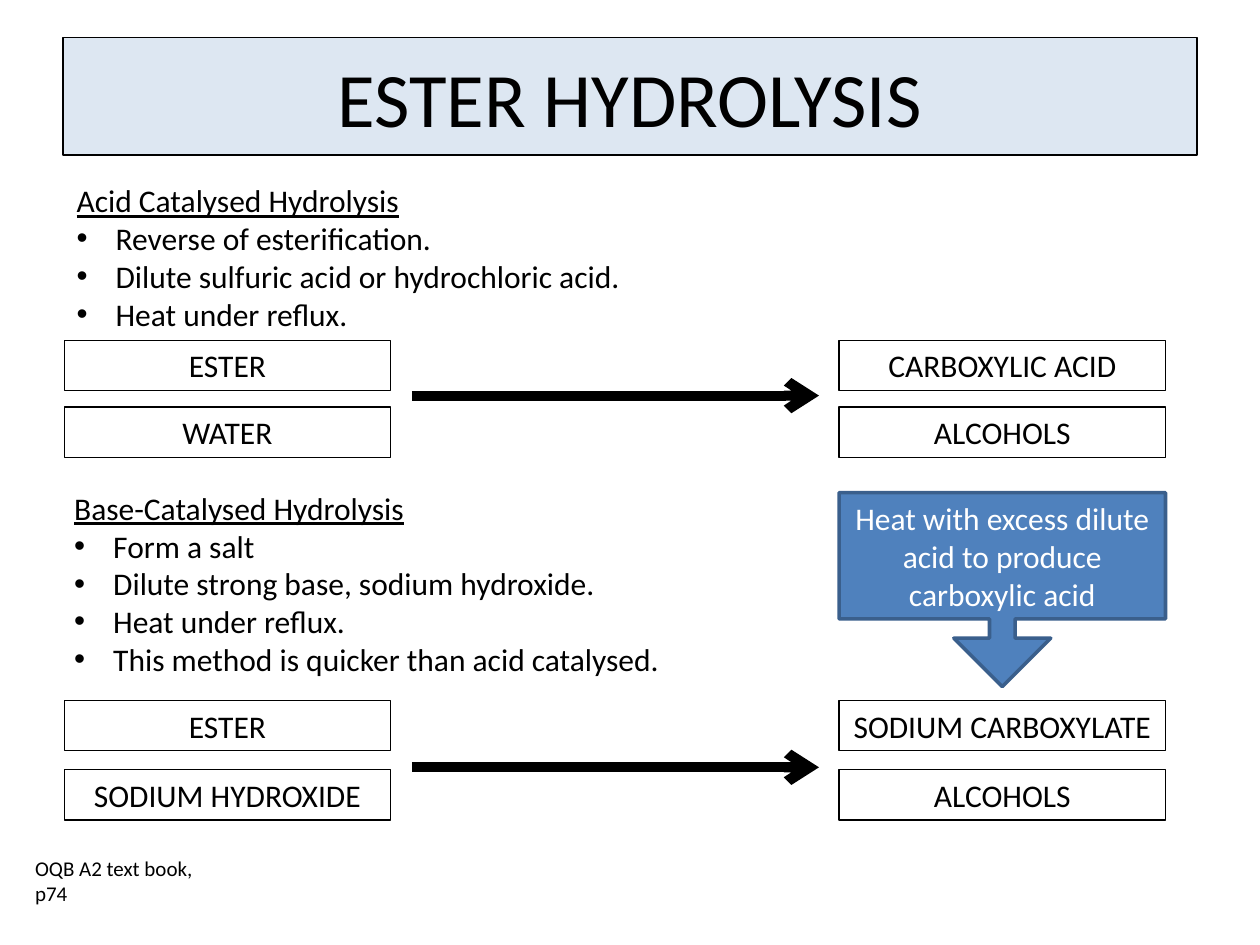
import dataclasses

import pptx
import pptx.dml.color
import pptx.enum.shapes
import pptx.enum.text
import pptx.oxml
import pptx.oxml.ns
import pptx.util

Inches = pptx.util.Inches
Align = pptx.enum.text.PP_ALIGN
Anchor = pptx.enum.text.MSO_ANCHOR
Shapes = pptx.enum.shapes.MSO_SHAPE


@dataclasses.dataclass(frozen=True)
class Theme:
    """Colours, font and type sizes of the slide."""
    font: str = "Calibri"
    ink: str = "000000"
    accent: str = "4F81BD"
    accent_edge: str = "3A5F8C"
    paper: str = "FFFFFF"
    title_opacity: int = 19
    title_size: int = 44
    body_size: int = 18
    note_size: int = 12
    thin: float = 0.75
    edge: float = 2
    thick: float = 5.75


THEME = Theme()


def rgb(code):
    """Turn a hex code into a colour."""
    return pptx.dml.color.RGBColor.from_string(code)


def add_xml(parent, tag, **attributes):
    """Append a DrawingML element to a parent and return it."""
    child = pptx.oxml.parse_xml(f"<a:{tag} {pptx.oxml.ns.nsdecls('a')}/>")
    for name, value in attributes.items():
        child.set(name, str(value))
    parent.append(child)
    return child


def set_line(shape, color, width):
    """Give a shape a solid line."""
    shape.line.color.rgb = rgb(color)
    shape.line.width = pptx.util.Pt(width)


def style(para, size, color=THEME.ink, align=None):
    """Set the font and alignment of a paragraph."""
    para.font.name = THEME.font
    para.font.size = pptx.util.Pt(size)
    para.font.color.rgb = rgb(color)
    para.alignment = align


def place_title(page, box, text):
    """Fill the title placeholder with a tinted, outlined banner."""
    title = page.shapes.title
    title.left, title.top, title.width, title.height = map(Inches, box)
    title.fill.solid()
    title.fill.fore_color.rgb = rgb(THEME.accent)
    tint = title.element.spPr.find(".//" + pptx.oxml.ns.qn("a:srgbClr"))
    add_xml(tint, "alpha", val=THEME.title_opacity * 1000)
    set_line(title, THEME.ink, THEME.thin)
    title.text_frame.text = text
    title.text_frame.vertical_anchor = Anchor.MIDDLE
    style(title.text_frame.paragraphs[0], THEME.title_size, align=Align.CENTER)


def place_text(page, box, text, size=THEME.body_size, align=None):
    """Add a wrapping text box with one paragraph and return it."""
    label = page.shapes.add_textbox(*map(Inches, box))
    frame = label.text_frame
    frame.word_wrap = True
    frame.auto_size = pptx.enum.text.MSO_AUTO_SIZE.SHAPE_TO_FIT_TEXT
    frame.text = text
    style(frame.paragraphs[0], size, align=align)
    return label


def place_conditions(page, box, heading, points):
    """Add an underlined heading with bullet points below it."""
    frame = place_text(page, box, heading).text_frame
    frame.paragraphs[0].font.underline = True
    indent = Inches(0.31)
    for point in points:
        para = frame.add_paragraph()
        para.text = point
        style(para, THEME.body_size)
        properties = para._p.get_or_add_pPr()
        properties.set("marL", str(indent))
        properties.set("indent", str(-indent))
        bullet_font = add_xml(properties, "buFont", typeface="Arial")
        bullet = add_xml(properties, "buChar", char="•")
        properties.remove(bullet_font)
        properties.remove(bullet)
        properties.insert(0, bullet_font)
        properties.insert(1, bullet)


def place_arrow(page, start, end, y):
    """Add a thick reaction arrow pointing right."""
    arrow = page.shapes.add_connector(
        pptx.enum.shapes.MSO_CONNECTOR.STRAIGHT,
        Inches(start), Inches(y), Inches(end), Inches(y))
    set_line(arrow, THEME.ink, THEME.thick)
    properties = arrow.element.spPr
    add_xml(properties.find(pptx.oxml.ns.qn("a:ln")), "tailEnd", type="arrow")
    add_xml(properties, "effectLst")


def place_reaction(page, box, step, arrow_drop, reactants, products):
    """Add stacked reactants and products joined by an arrow."""
    left, top, width, height = box
    cell_width, cell_height = 2.59, 0.4
    for x, names in ((left, reactants), (left + width - cell_width, products)):
        for row, name in enumerate(names):
            cell = place_text(page, (x, top + row * step, cell_width, cell_height),
                              name, align=Align.CENTER)
            set_line(cell, THEME.ink, THEME.thin)
    place_arrow(page, left + 2.76, left + 5.99, top + arrow_drop)


def place_callout(page, box, text):
    """Add the filled callout with an arrow pointing down."""
    callout = page.shapes.add_shape(Shapes.DOWN_ARROW_CALLOUT, *map(Inches, box))
    for index, value in enumerate((0.132, 0.25, 0.25, 0.651)):
        callout.adjustments[index] = value
    callout.shadow.inherit = False
    callout.fill.solid()
    callout.fill.fore_color.rgb = rgb(THEME.accent)
    set_line(callout, THEME.accent_edge, THEME.edge)
    frame = callout.text_frame
    frame.word_wrap = True
    frame.vertical_anchor = Anchor.MIDDLE
    frame.text = text
    style(frame.paragraphs[0], THEME.body_size, THEME.paper, Align.CENTER)


def main():
    """Build and save the slide."""
    deck = pptx.Presentation()
    deck.slide_width, deck.slide_height = Inches(10), Inches(7.5)
    page = deck.slides.add_slide(deck.slide_layouts.get_by_name("Title Only"))
    place_title(page, (0.5, 0.3, 9, 0.93), "ESTER HYDROLYSIS")
    place_text(page, (0.18, 6.74, 1.59, 0.5), "OQB A2 text book, p74", THEME.note_size)
    place_conditions(page, (0.51, 1.39, 4.8, 1.31), "Acid Catalysed Hydrolysis", (
        "Reverse of esterification.",
        "Dilute sulfuric acid or hydrochloric acid.",
        "Heat under reflux."))
    place_reaction(page, (0.51, 2.7, 8.74, 0.94), 0.53, 0.44,
                   ("ESTER", "WATER"), ("CARBOXYLIC ACID", "ALCOHOLS"))
    place_conditions(page, (0.49, 3.83, 4.98, 1.62), "Base-Catalysed Hydrolysis", (
        "Form a salt",
        "Dilute strong base, sodium hydroxide.",
        "Heat under reflux.",
        "This method is quicker than acid catalysed."))
    place_reaction(page, (0.51, 5.56, 8.74, 0.95), 0.55, 0.53,
                   ("ESTER", "SODIUM HYDROXIDE"), ("SODIUM CARBOXYLATE", "ALCOHOLS"))
    place_callout(page, (6.66, 3.91, 2.59, 1.54),
                  "Heat with excess dilute acid to produce carboxylic acid")
    deck.save("out.pptx")


if __name__ == "__main__":
    main()
